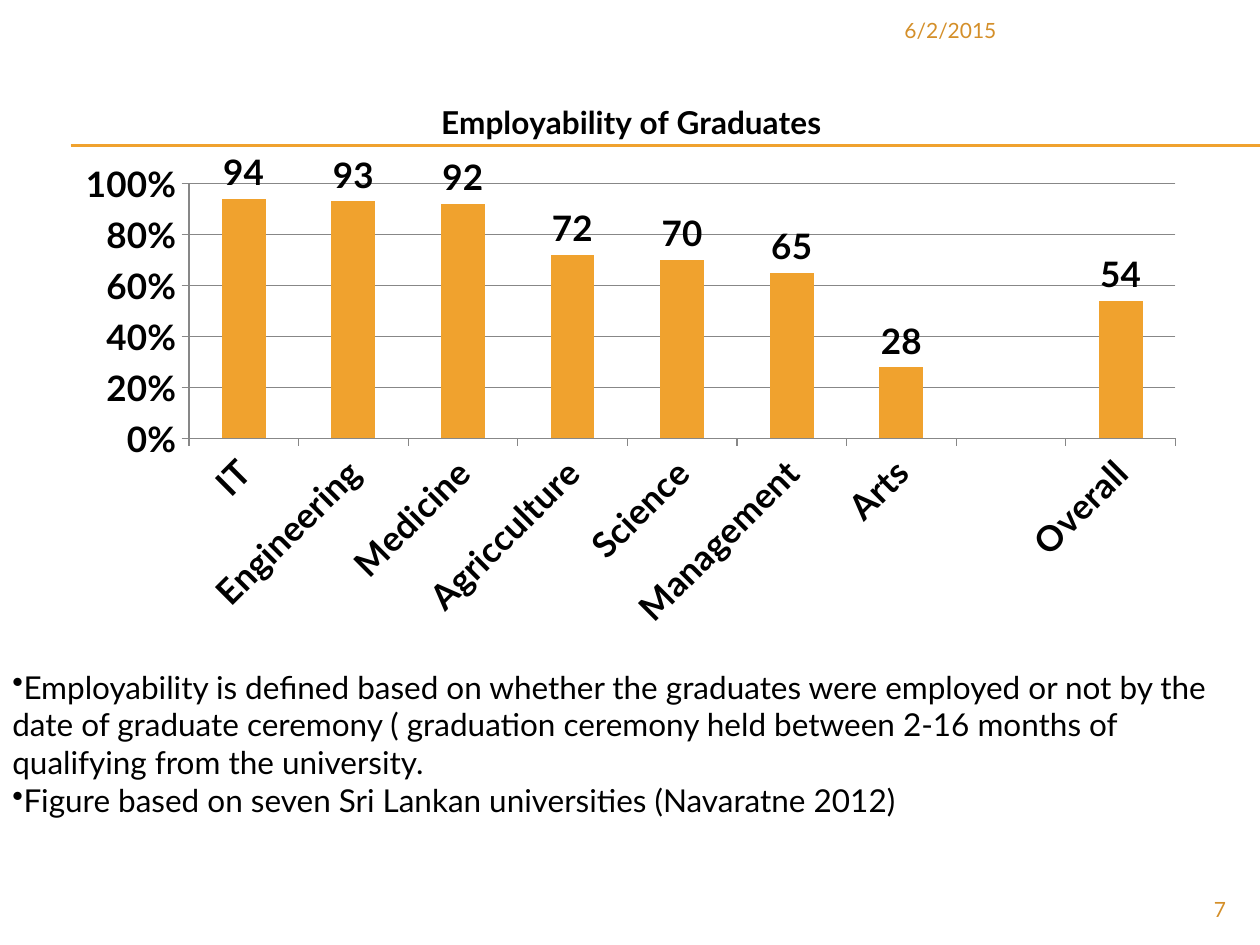
import pptx
import pptx.chart.data
import pptx.dml.color
import pptx.enum.chart
import pptx.enum.shapes
import pptx.enum.text
import pptx.oxml
import pptx.oxml.ns
import pptx.util

WIDTH, HEIGHT = 10, 7.5
FONT = "Lato"
BLACK, ORANGE, DARK_ORANGE, GRAY = "000000", "F0A22E", "D48F29", "878787"
EMPLOYABILITY = {
    "IT": 94, "Engineering": 93, "Medicine": 92, "Agricculture": 72,
    "Science": 70, "Management": 65, "Arts": 28, "": None, "Overall": 54,
}
NOTES = [
    "Employability is defined based on whether the graduates were employed or not "
    "by the date of graduate ceremony ( graduation ceremony held between 2-16 months "
    "of qualifying from the university.",
    "Figure based on seven Sri Lankan universities (Navaratne 2012)",
]


def color(hex_string):
    """Return the colour for a hex string."""
    return pptx.dml.color.RGBColor.from_string(hex_string)


def box(left, top, width, height):
    """Turn shares of the slide's size into lengths."""
    return [pptx.util.Inches(share * side)
            for share, side in zip((left, top, width, height), (WIDTH, HEIGHT) * 2)]


def style_font(font, size, hex_string=BLACK, bold=False):
    """Set the typeface, size, colour and weight of a font."""
    font.name = FONT
    font.size = pptx.util.Pt(size)
    font.bold = bold
    font.color.rgb = color(hex_string)


def add_rule(slide, top):
    """Draw a header line from the left margin to the slide's right edge."""
    left, top, right, _ = box(0.056, top, 1, 0)
    line = slide.shapes.add_connector(
        pptx.enum.shapes.MSO_CONNECTOR.STRAIGHT, left, top, right, top)
    line.line.color.rgb = color(ORANGE)
    line.line.width = pptx.util.Pt(0.75)
    line._element.spPr.append(pptx.oxml.parse_xml(
        f'<a:effectLst {pptx.oxml.ns.nsdecls("a")}/>'))


def add_text(slide, place, lines, size, hex_string, align="LEFT", anchor="MIDDLE", bullet=None):
    """Add a wrapped text box, with a bullet character if one is given."""
    text_frame = slide.shapes.add_textbox(*box(*place)).text_frame
    text_frame.word_wrap = True
    text_frame.vertical_anchor = getattr(pptx.enum.text.MSO_ANCHOR, anchor)
    text_frame.text = "\n".join(lines)
    for paragraph in text_frame.paragraphs:
        paragraph.alignment = getattr(pptx.enum.text.PP_ALIGN, align)
        style_font(paragraph.runs[0].font, size, hex_string)
        if bullet:
            paragraph._p.get_or_add_pPr().append(pptx.oxml.parse_xml(
                f'<a:buChar {pptx.oxml.ns.nsdecls("a")} char="{bullet}"/>'))
    return text_frame


def place_plot(chart, **shares):
    """Fix the inner plot area at shares of the chart's size."""
    plot_area = chart._chartSpace.chart.plotArea
    for layout in plot_area.findall(pptx.oxml.ns.qn("c:layout")):
        plot_area.remove(layout)
    modes = '<c:xMode val="edge"/><c:yMode val="edge"/>'
    sizes = "".join(f'<c:{name} val="{share}"/>' for name, share in shares.items())
    plot_area.insert(0, pptx.oxml.parse_xml(
        f'<c:layout {pptx.oxml.ns.nsdecls("c")}><c:manualLayout>'
        f'<c:layoutTarget val="inner"/>{modes}{sizes}</c:manualLayout></c:layout>'))


def style_axes(chart):
    """Set the axis scale, lines, ticks and labels."""
    for axis in (chart.category_axis, chart.value_axis):
        style_font(axis.tick_labels.font, 20, bold=True)
        axis.major_tick_mark = pptx.enum.chart.XL_TICK_MARK.OUTSIDE
        axis.format.line.color.rgb = color(GRAY)
    chart.category_axis._element.txPr.bodyPr.set("rot", "-2700000")
    value_axis = chart.value_axis
    value_axis.minimum_scale, value_axis.maximum_scale = 0, 100
    value_axis.major_unit = 20
    value_axis.has_major_gridlines = True
    value_axis.major_gridlines.format.line.color.rgb = color(GRAY)
    value_axis.tick_labels.number_format = "General\\%"
    value_axis.tick_labels.number_format_is_linked = False


def add_column_chart(slide, place, title, values):
    """Add a titled column chart with a value above each column."""
    data = pptx.chart.data.CategoryChartData()
    data.categories = list(values)
    data.add_series("Series 1", list(values.values()))
    chart = slide.shapes.add_chart(
        pptx.enum.chart.XL_CHART_TYPE.COLUMN_CLUSTERED, *box(*place), data).chart
    style_font(chart.font, 10)
    chart.has_legend = False
    chart.has_title = True
    chart.chart_title.text_frame.text = title
    style_font(chart.chart_title.text_frame.paragraphs[0].runs[0].font, 18, bold=True)
    plot = chart.plots[0]
    plot.gap_width = 150
    plot.vary_by_categories = False
    plot.has_data_labels = True
    plot.data_labels.show_value = True
    plot.data_labels.position = pptx.enum.chart.XL_LABEL_POSITION.OUTSIDE_END
    style_font(plot.data_labels.font, 20, bold=True)
    fill = plot.series[0].format.fill
    fill.solid()
    fill.fore_color.rgb = color(ORANGE)
    style_axes(chart)
    place_plot(chart, x=0.11, y=0.19, w=0.87, h=0.45)


def main():
    """Build and save the slide."""
    presentation = pptx.Presentation()
    presentation.slide_width = pptx.util.Inches(WIDTH)
    presentation.slide_height = pptx.util.Inches(HEIGHT)
    slide = presentation.slides.add_slide(presentation.slide_layouts[6])
    for top in (1.15, 1.16):
        add_rule(slide, top / HEIGHT)
    add_column_chart(slide, (0.051, 0.08, 0.9, 0.6),
                     "Employability of Graduates", EMPLOYABILITY)
    notes = add_text(slide, (0, 0.7, 1, 0.175), NOTES, 18, BLACK, anchor="TOP", bullet="•")
    notes.auto_size = pptx.enum.text.MSO_AUTO_SIZE.SHAPE_TO_FIT_TEXT
    add_text(slide, (0.708, 0.01, 0.275, 0.043), ["6/2/2015"], 12, DARK_ORANGE)
    add_text(slide, (0.9, 0.944, 0.083, 0.036), ["7"], 12, DARK_ORANGE, align="RIGHT")
    presentation.save("out.pptx")


if __name__ == "__main__":
    main()
